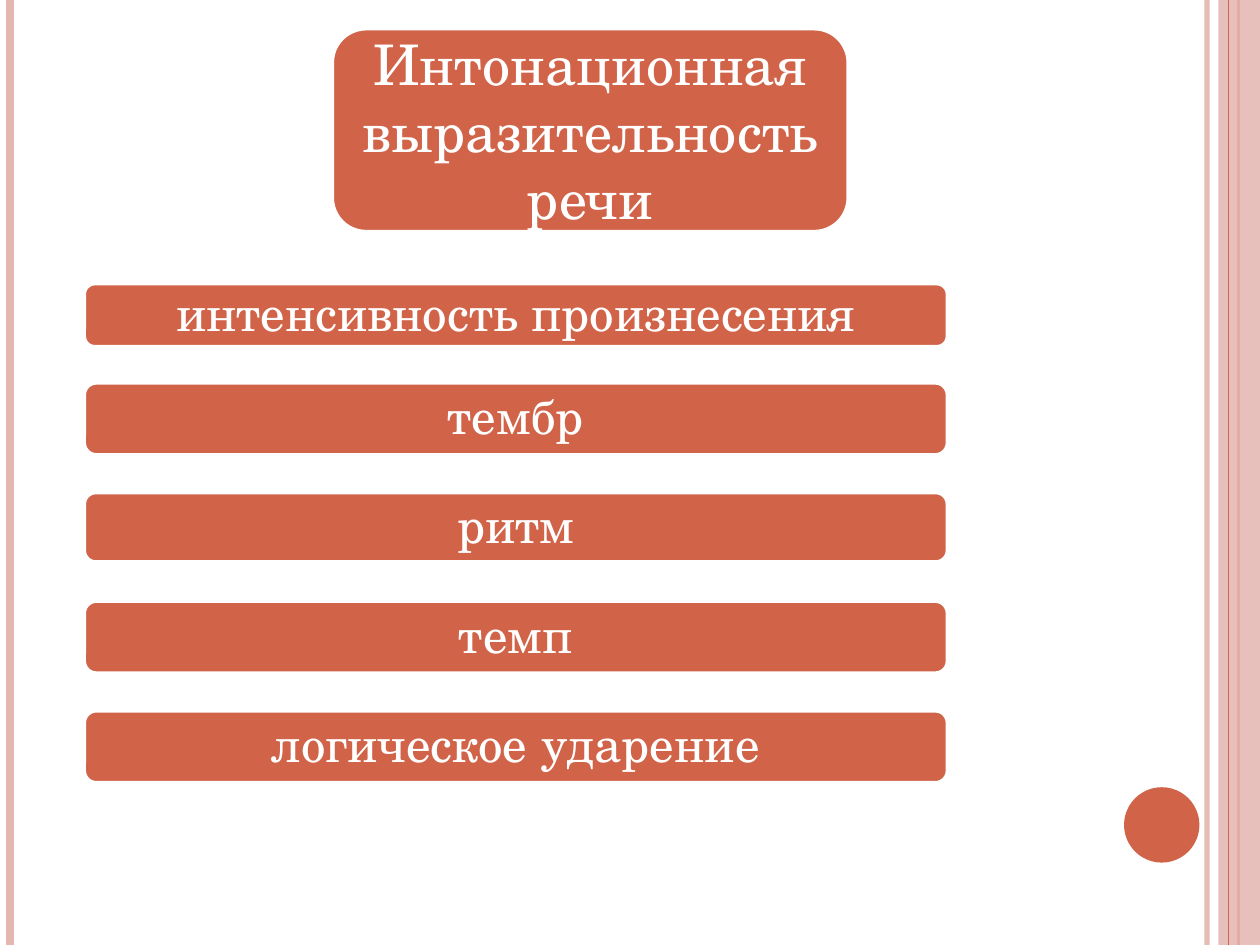
from lxml import etree
from pptx import Presentation
from pptx.dml.color import RGBColor
from pptx.enum import shapes, text
from pptx.oxml.ns import qn
from pptx.util import Cm, Pt

TERRACOTTA = RGBColor(0xD1, 0x63, 0x49)
PINK = RGBColor(0xE5, 0xB7, 0xB1)
WHITE = RGBColor(0xFF, 0xFF, 0xFF)
FONT = "TeX Gyre Schola"
WIDTH, HEIGHT = 25.4, 19.05

# Text, top and height of each bar, in cm
BARS = [
    ("интенсивность произнесения", 5.72, 1.27),
    ("тембр", 7.72, 1.45),
    ("ритм", 9.93, 1.4),
    ("темп", 12.12, 1.45),
    ("логическое ударение", 14.33, 1.45),
]


def set_alpha(fill, percent):
    color = fill._xPr.find(qn("a:solidFill"))[0]
    etree.SubElement(color, qn("a:alpha")).set("val", str(percent * 1000))


def add_shape(s, kind, x, y, w, h, color):
    sp = s.shapes.add_shape(kind, Cm(x), Cm(y), Cm(w), Cm(h))
    sp.shadow.inherit = False
    sp.fill.solid()
    sp.fill.fore_color.rgb = color
    sp.line.fill.background()
    return sp


def add_stripe(s, x, h, color, width, alpha=None):
    line = s.shapes.add_connector(shapes.MSO_CONNECTOR.STRAIGHT, Cm(x), 0, Cm(x), Cm(h))
    line.line.color.rgb = color
    line.line.width = Pt(width)
    if alpha:
        set_alpha(line.line.fill, alpha)
    etree.SubElement(line._element.spPr, qn("a:effectLst"))


def add_frame(s, w, h):
    """Stripes along both edges and the page-number disc."""
    add_stripe(s, w - 1.07, h, PINK, 3, 93)
    add_stripe(s, 0.2, h, PINK, 4.5)
    add_stripe(s, w - 0.43, h, TERRACOTTA, 1.5)
    band = add_shape(s, shapes.MSO_SHAPE.RECTANGLE, w - 0.84, 0, 0.84, h, PINK)
    set_alpha(band.fill, 87)
    add_stripe(s, w - 0.64, h, TERRACOTTA, 0.75)
    add_shape(s, shapes.MSO_SHAPE.OVAL, w - 2.74, h - 3.18, 1.52, 1.52, TERRACOTTA)


def add_block(s, x, y, w, h, lines, size, inset, spacing=1.0):
    """Rounded block with centred white text."""
    sp = add_shape(s, shapes.MSO_SHAPE.ROUNDED_RECTANGLE, x, y, w, h, TERRACOTTA)
    sp.line.color.rgb = WHITE
    sp.line.width = Pt(2)
    tf = sp.text_frame
    tf.word_wrap = True
    tf.vertical_anchor = text.MSO_ANCHOR.MIDDLE
    tf.margin_left = tf.margin_right = tf.margin_top = tf.margin_bottom = Cm(inset)
    for i, line in enumerate(lines):
        p = tf.add_paragraph() if i else tf.paragraphs[0]
        p.text = line
        p.alignment = text.PP_ALIGN.CENTER
        p.line_spacing = spacing
        p.font.name = FONT
        p.font.size = Pt(size)
        p.font.color.rgb = WHITE


def add_bars(s, x, w):
    for label, y, h in BARS:
        add_block(s, x, y, w, h, [label], 28, 0.23, 0.9)


def main():
    prs = Presentation()
    prs.slide_width, prs.slide_height = Cm(WIDTH), Cm(HEIGHT)
    s = prs.slides.add_slide(prs.slide_layouts[6])
    add_frame(s, WIDTH, HEIGHT)
    # Title block
    add_block(s, 6.7, 0.58, 10.4, 4.09,
              ["Интонационная", "выразительность речи"], 32, 0.13)
    # Means of expression
    add_bars(s, 1.7, 17.4)
    prs.save("out.pptx")


if __name__ == "__main__":
    main()
